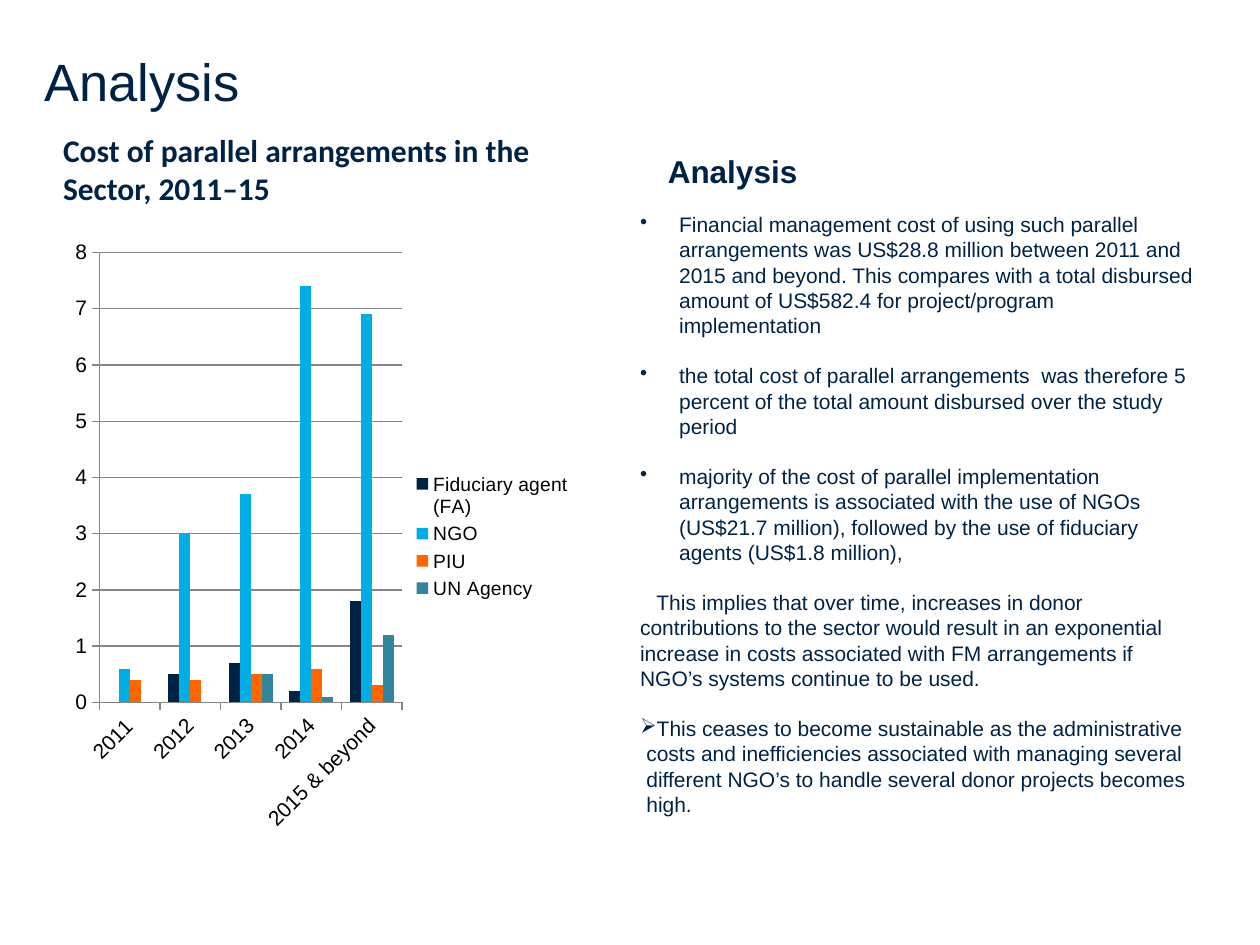
from lxml import etree
from pptx import Presentation
from pptx.chart.data import CategoryChartData
from pptx.dml.color import RGBColor
from pptx.enum.chart import XL_CHART_TYPE, XL_LEGEND_POSITION, XL_TICK_MARK
from pptx.enum.text import MSO_ANCHOR
from pptx.oxml import parse_xml
from pptx.oxml.ns import nsdecls, qn
from pptx.util import Inches, Pt

COLORS = {"navy": "002345", "sky": "00ADE4", "orange": "FF6600",
          "teal": "31859C", "axis": "868686", "text": "000000"}

YEARS = ["2011", "2012", "2013", "2014", "2015 & beyond"]
COSTS = [
    ("Fiduciary agent (FA)", "navy", (0, 0.5, 0.7, 0.2, 1.8)),
    ("NGO", "sky", (0.6, 3, 3.7, 7.4, 6.9)),
    ("PIU", "orange", (0.4, 0.4, 0.5, 0.6, 0.3)),
    ("UN Agency", "teal", (0, 0, 0.5, 0.1, 1.2)),
]

BULLET = {"bullet": "•", "margin": 0.31, "indent": -0.31}
FINDINGS = [
    ("Financial management cost of using such parallel arrangements was US$28.8 million "
     "between 2011 and 2015 and beyond. This compares with a total disbursed amount of "
     "US$582.4 for project/program implementation", BULLET),
    ("the total cost of parallel arrangements  was therefore 5 percent of the total amount "
     "disbursed over the study period", BULLET),
    ("majority of the cost of parallel implementation arrangements is associated with the use "
     "of NGOs (US$21.7 million), followed by the use of fiduciary agents (US$1.8 million),",
     BULLET),
    ("This implies that over time, increases in donor contributions to the sector would result "
     "in an exponential increase in costs associated with FM arrangements if NGO’s systems "
     "continue to be used.", {"indent": 0.13}),
    ("This ceases to become sustainable as the administrative costs and inefficiencies "
     "associated with managing several different NGO’s to handle several donor projects "
     "becomes high.", {"bullet": "➢", "margin": 0.05, "indent": -0.05}),
]


def rgb(name):
    return RGBColor.from_string(COLORS[name])


def write_paragraph(para, text, size=12, font="Arial", color="navy", bold=False,
                    bullet=None, margin=0, indent=0, before=0, line=None):
    """Fill one paragraph and set its format."""
    properties = para._p.get_or_add_pPr()
    properties.set("marL", str(Inches(margin)))
    properties.set("indent", str(Inches(indent)))
    if bullet:
        etree.SubElement(properties, qn("a:buChar")).set("char", bullet)
    para.space_before = Pt(before)
    if line:
        para.line_spacing = Pt(line)
    span = para.add_run()
    span.text = text
    span.font.size, span.font.name, span.font.bold = Pt(size), font, bold
    span.font.color.rgb = rgb(color)


class SlideBuilder:
    font = "Arial"

    def __init__(self, page):
        self.page = page

    def text(self, left, top, width, height, paragraphs, anchor=MSO_ANCHOR.TOP):
        """Add a text box from (text, format) pairs."""
        box = self.page.shapes.add_textbox(*map(Inches, (left, top, width, height)))
        frame = box.text_frame
        frame.word_wrap = True
        frame.vertical_anchor = anchor
        frame.margin_left = frame.margin_right = frame.margin_top = frame.margin_bottom = 0
        for index, (text, style) in enumerate(paragraphs):
            para = frame.add_paragraph() if index else frame.paragraphs[0]
            write_paragraph(para, text, **style)

    def heading(self, left, top, width, height, text, **style):
        self.text(left, top, width, height, [(text, style)], MSO_ANCHOR.BOTTOM)

    def column_chart(self, left, top, width, height, categories, rows, layout):
        """Add a clustered column chart; layout is the inner plot area in fractions."""
        data = CategoryChartData()
        data.categories = categories
        for name, _, values in rows:
            data.add_series(name, values)
        chart = self.page.shapes.add_chart(
            XL_CHART_TYPE.COLUMN_CLUSTERED, *map(Inches, (left, top, width, height)), data).chart
        chart.has_title = False
        chart.font.name, chart.font.size = self.font, Pt(10)
        chart.font.color.rgb = rgb("text")

        # Columns
        plot = chart.plots[0]
        plot.gap_width, plot.overlap, plot.vary_by_categories = 150, 0, False
        for series, (_, color, _) in zip(plot.series, rows):
            series.format.fill.solid()
            series.format.fill.fore_color.rgb = rgb(color)

        # Axes
        for axis in (chart.category_axis, chart.value_axis):
            axis.tick_labels.font.size = Pt(12)
            axis.major_tick_mark = XL_TICK_MARK.OUTSIDE
            axis.minor_tick_mark = XL_TICK_MARK.NONE
            self.style_line(axis.format.line)
        angle = chart.category_axis.tick_labels.font._element.getparent().getparent().getparent()
        angle.find(qn("a:bodyPr")).set("rot", str(-45 * 60000))
        values = chart.value_axis
        values.minimum_scale, values.maximum_scale, values.major_unit = 0, 8, 1
        values.has_major_gridlines = True
        self.style_line(values.major_gridlines.format.line)

        # Legend
        chart.has_legend = True
        chart.legend.position = XL_LEGEND_POSITION.RIGHT
        chart.legend.include_in_layout = False
        chart.legend.font.size = Pt(11)

        # Plot area
        area = chart._chartSpace.chart.plotArea
        for old in area.findall(qn("c:layout")):
            area.remove(old)
        sizes = "".join(f'<c:{key} val="{value}"/>' for key, value in layout.items())
        area.insert(0, parse_xml(
            f'<c:layout {nsdecls("c")}><c:manualLayout><c:layoutTarget val="inner"/>'
            f'<c:xMode val="edge"/><c:yMode val="edge"/>{sizes}</c:manualLayout></c:layout>'))

    def style_line(self, line):
        line.color.rgb = rgb("axis")
        line.width = Pt(0.75)


def main():
    deck = Presentation()
    deck.slide_width, deck.slide_height = Inches(10), Inches(7.5)
    page = deck.slides.add_slide(deck.slide_layouts[6])
    builder = SlideBuilder(page)

    # Headings
    builder.heading(0.35, 0.28, 9.29, 0.61, "Analysis", size=30)
    builder.heading(0.5, 1.08, 4.42, 0.56, "Cost of parallel arrangements in the Sector, 2011–15",
                    size=18, font="Calibri", bold=True)
    builder.heading(5.23, 1.08, 4.42, 0.43, "Analysis", size=18, bold=True, indent=0.07)

    # Findings, one line apart
    pitch = 14.4
    builder.text(5.08, 1.68, 4.42, 5.02, [
        (text, {**style, "line": pitch, "before": pitch if index else 0})
        for index, (text, style) in enumerate(FINDINGS)])

    # Cost by year
    builder.column_chart(0.5, 1.81, 4.14, 4.89, YEARS, COSTS,
                         {"x": 0.07, "y": 0.04, "w": 0.58, "h": 0.73})

    deck.save("out.pptx")


if __name__ == "__main__":
    main()
